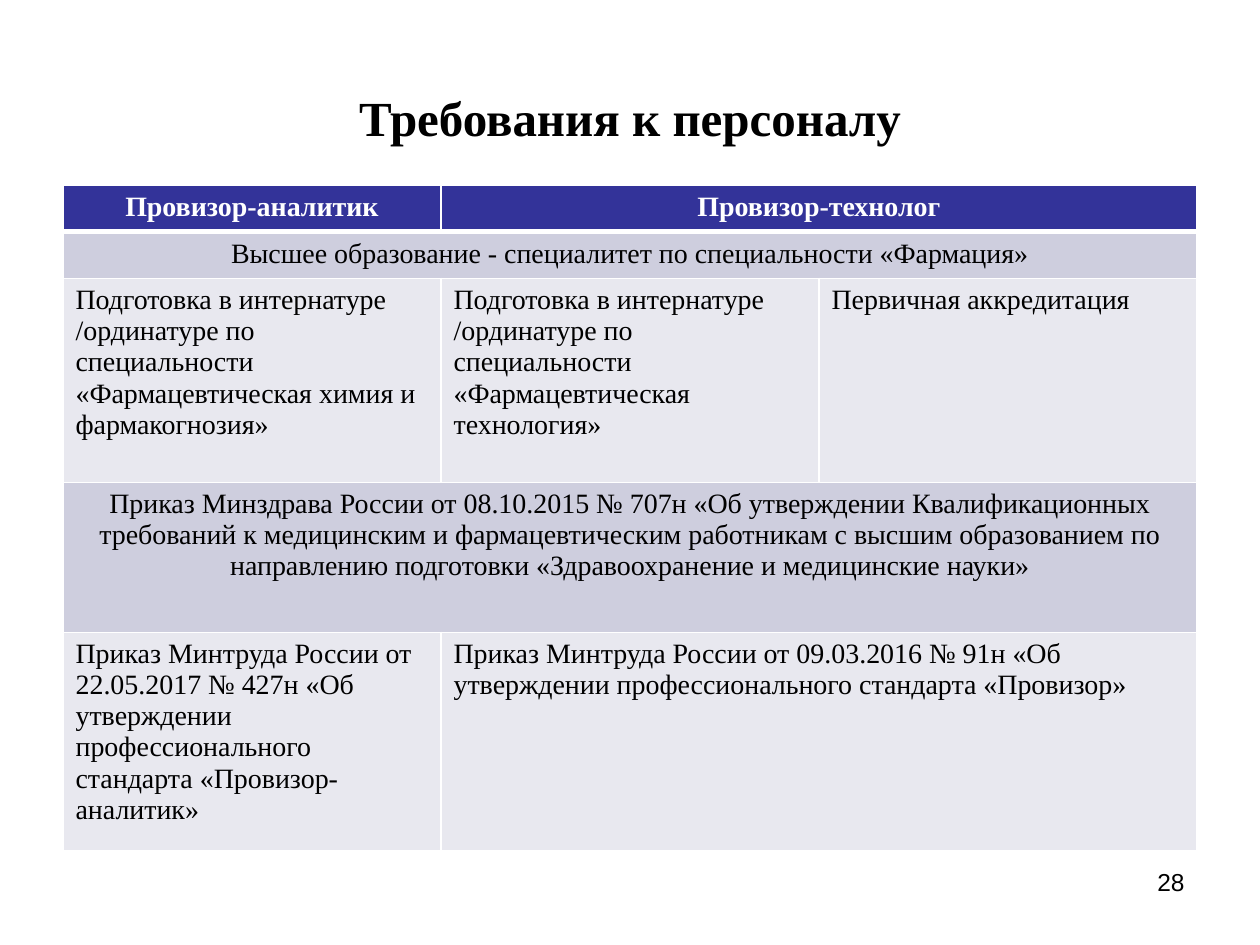
"""Build a slide with a table of staff requirements for pharmacists."""
import pptx
import pptx.dml.color
import pptx.enum.text
import pptx.oxml.ns
import pptx.util
from lxml import etree
from pptx.util import Inches

ALIGN = pptx.enum.text.PP_ALIGN
ANCHOR = pptx.enum.text.MSO_ANCHOR


def format_text(frame, size, color, align, font="Times New Roman", bold=False):
    """Format every paragraph and run of a text frame."""
    frame.word_wrap = True
    for para in frame.paragraphs:
        para.alignment = align
        for span in para.runs:
            span.font.name = font
            span.font.size = pptx.util.Pt(size)
            span.font.bold = bold
            span.font.color.rgb = pptx.dml.color.RGBColor.from_string(color)


def add_border(cell, side, width):
    """Add a white border to one side of a table cell."""
    properties = cell._tc.get_or_add_tcPr()
    line = etree.SubElement(properties, pptx.oxml.ns.qn(f"a:ln{side}"), w=str(pptx.util.Pt(width)))
    fill = etree.SubElement(line, pptx.oxml.ns.qn("a:solidFill"))
    etree.SubElement(fill, pptx.oxml.ns.qn("a:srgbClr"), val="FFFFFF")


deck = pptx.Presentation()
deck.slide_width, deck.slide_height = Inches(10), Inches(7.5)
page = deck.slides.add_slide(deck.slide_layouts[5])

title = page.shapes.title
title.left, title.top, title.width, title.height = Inches(0.5), Inches(0.3), Inches(9), Inches(1.25)
title.text_frame.text = "Требования к персоналу"
title.text_frame.vertical_anchor = ANCHOR.MIDDLE
format_text(title.text_frame, 28, "000000", ALIGN.CENTER, bold=True)

rows = [
    (0.37, "333399", ALIGN.CENTER, ["Провизор-аналитик", "Провизор-технолог"]),
    (0.37, "CECEDE", ALIGN.CENTER, ["Высшее образование - специалитет по специальности «Фармация»"]),
    (1.62, "E8E8EF", ALIGN.LEFT, [
        "Подготовка в интернатуре /ординатуре по специальности «Фармацевтическая химия и фармакогнозия»",
        "Подготовка в интернатуре /ординатуре по специальности «Фармацевтическая технология»",
        "Первичная аккредитация",
    ]),
    (1.19, "CECEDE", ALIGN.CENTER, [
        "Приказ Минздрава России от 08.10.2015 № 707н «Об утверждении Квалификационных требований "
        "к медицинским и фармацевтическим работникам с высшим образованием по направлению подготовки "
        "«Здравоохранение и медицинские науки»",
    ]),
    (1.73, "E8E8EF", ALIGN.LEFT, [
        "Приказ Минтруда России от 22.05.2017 № 427н «Об утверждении профессионального стандарта "
        "«Провизор-аналитик»",
        "Приказ Минтруда России от 09.03.2016 № 91н «Об утверждении профессионального стандарта «Провизор»",
    ]),
]
column_count = 3
table = page.shapes.add_table(
    len(rows), column_count, Inches(0.5), Inches(1.47), Inches(9), Inches(5.28)
).table
for column in table.columns:
    column.width = Inches(3)

for row_index, (height, color, align, texts) in enumerate(rows):
    table.rows[row_index].height = Inches(height)
    is_header = row_index == 0
    for column_index in range(column_count):
        cell = table.cell(row_index, column_index)
        top_width = 3 if row_index == 1 else 1
        bottom_width = 3 if is_header else 1
        for side, width in zip("LRTB", (1, 1, top_width, bottom_width)):
            add_border(cell, side, width)
        cell.fill.solid()
        cell.fill.fore_color.rgb = pptx.dml.color.RGBColor.from_string(color)
        if column_index < len(texts):
            cell.text_frame.text = texts[column_index]
            format_text(cell.text_frame, 16, "FFFFFF" if is_header else "000000", align, bold=is_header)
    if len(texts) < column_count:
        table.cell(row_index, len(texts) - 1).merge(table.cell(row_index, column_count - 1))

number_box = page.shapes.add_textbox(Inches(7.17), Inches(6.83), Inches(2.33), Inches(0.52))
number_box.text_frame.text = "28"
format_text(number_box.text_frame, 14, "000000", ALIGN.RIGHT, font="Arial")

deck.save("out.pptx")
